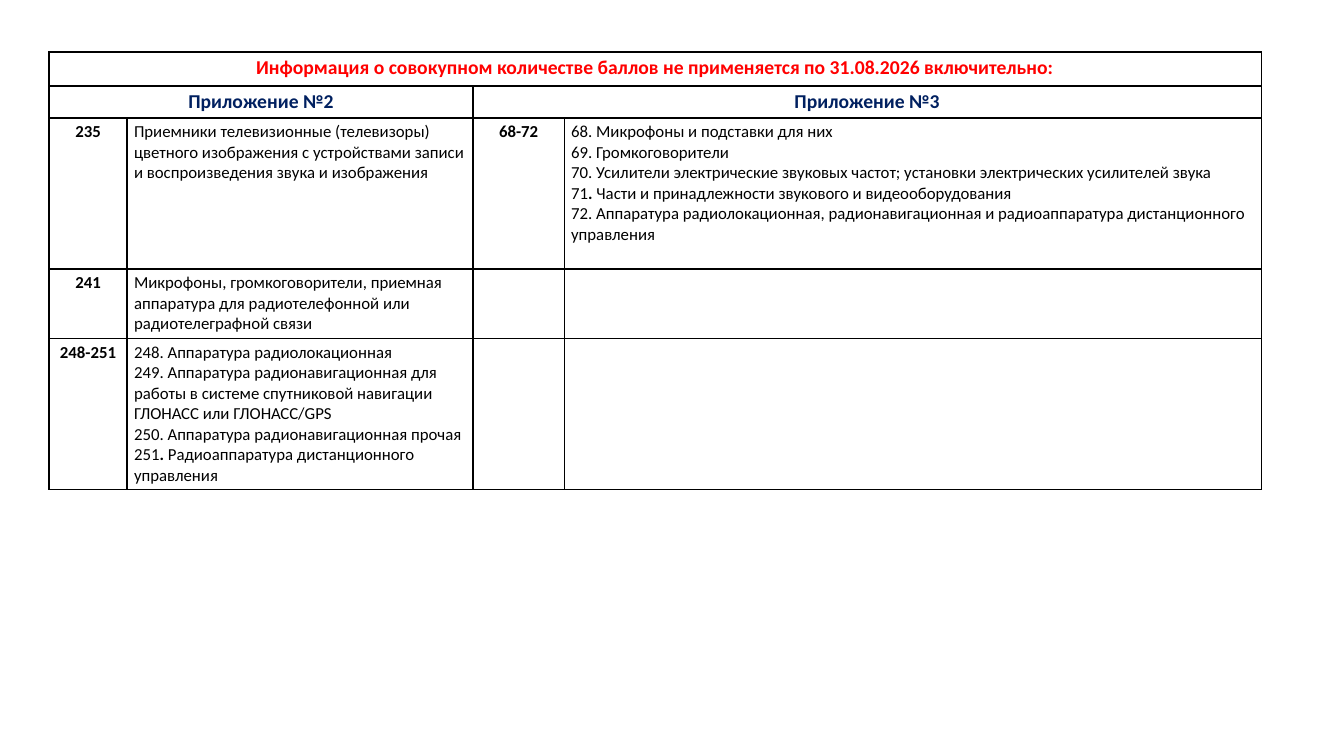
import pptx
import pptx.util
import pptx.dml.color
import pptx.enum.text
import lxml.etree

RGB = pptx.dml.color.RGBColor
RED = RGB(0xFF, 0x00, 0x00)
NAVY = RGB(0x00, 0x20, 0x60)
BLACK = RGB(0x00, 0x00, 0x00)
FONT = "Calibri"
PX = 914400 / 100.8

# Content: in body lines, the parts between bars switch to bold
TITLE = "Информация о совокупном количестве баллов не применяется по 31.08.2026 включительно:"
HEADS = ["Приложение №2", "Приложение №3"]
ROWS = [
    ("235",
     ["Приемники телевизионные (телевизоры) цветного изображения с устройствами записи "
      "и воспроизведения звука и изображения"],
     "68-72",
     ["68. Микрофоны и подставки для них",
      "69. Громкоговорители",
      "70. Усилители электрические звуковых частот; установки электрических усилителей звука",
      "71|. |Части и принадлежности звукового и видеооборудования",
      "72. Аппаратура радиолокационная, радионавигационная и радиоаппаратура "
      "дистанционного управления"]),
    ("241",
     ["Микрофоны, громкоговорители, приемная аппаратура для радиотелефонной "
      "или радиотелеграфной связи"],
     "", []),
    ("248-251",
     ["248. Аппаратура радиолокационная",
      "249. Аппаратура радионавигационная для работы в системе спутниковой навигации "
      "ГЛОНАСС или ГЛОНАСС/GPS",
      "250. Аппаратура радионавигационная прочая",
      "251|. |Радиоаппаратура дистанционного управления"],
     "", []),
]

# Layout in px
LEFT, TOP = 49, 52
WIDTHS = [78, 346, 91, 697]
HEIGHTS = [34, 32, 151, 69, 151]
PAD_X, PAD_Y = 7, 4


def px(size):
    return pptx.util.Emu(round(size * PX))


def style(run, size, color, bold):
    run.font.name = FONT
    run.font.size = pptx.util.Pt(size)
    run.font.color.rgb = color
    run.font.bold = bold


def label(cell, text, size=12, color=BLACK):
    """Write one bold centred line."""
    para = cell.text_frame.paragraphs[0]
    para.text = text
    para.alignment = pptx.enum.text.PP_ALIGN.CENTER
    para.font.size = pptx.util.Pt(size)
    for run in para.runs:
        style(run, size, color, True)


def body(cell, lines):
    """Write plain lines, one paragraph each."""
    frame = cell.text_frame
    frame.paragraphs[0].font.size = pptx.util.Pt(12)
    for i, line in enumerate(lines):
        para = frame.add_paragraph() if i else frame.paragraphs[0]
        for j, part in enumerate(line.split("|")):
            run = para.add_run()
            run.text = part
            style(run, 12, BLACK, j % 2 == 1)


def frame_cell(cell):
    """Set margins, no fill and a thin black border."""
    cell.margin_left = cell.margin_right = px(PAD_X)
    cell.margin_top = cell.margin_bottom = px(PAD_Y)
    cell.fill.background()
    props = cell._tc.get_or_add_tcPr()
    ns = "http://schemas.openxmlformats.org/drawingml/2006/main"
    for i, side in enumerate(["lnL", "lnR", "lnT", "lnB"]):
        edge = pptx.oxml.parse_xml(
            f'<a:{side} xmlns:a="{ns}" w="12700"><a:solidFill>'
            f'<a:srgbClr val="{BLACK}"/></a:solidFill></a:{side}>')
        props.insert(i, edge)


def main():
    deck = pptx.Presentation()
    deck.slide_width = pptx.util.Inches(13.33)
    deck.slide_height = pptx.util.Inches(7.5)
    slide = deck.slides.add_slide(deck.slide_layouts[6])

    # Table grid
    table = slide.shapes.add_table(
        len(HEIGHTS), len(WIDTHS), px(LEFT), px(TOP),
        px(sum(WIDTHS)), px(sum(HEIGHTS))).table
    table.first_row = table.horz_banding = False
    for col, width in zip(table.columns, WIDTHS):
        col.width = px(width)
    for row, height in zip(table.rows, HEIGHTS):
        row.height = px(height)
    for cell in table.iter_cells():
        frame_cell(cell)

    # Title and heads across merged cells
    table.cell(0, 0).merge(table.cell(0, 3))
    label(table.cell(0, 0), TITLE, 14, RED)
    for i, head in enumerate(HEADS):
        cell = table.cell(1, 2 * i)
        cell.merge(table.cell(1, 2 * i + 1))
        label(cell, head, 14, NAVY)

    # Number and text pairs
    for r, row in enumerate(ROWS, start=2):
        for c in (0, 2):
            label(table.cell(r, c), row[c])
            body(table.cell(r, c + 1), row[c + 1])

    deck.save("out.pptx")


if __name__ == "__main__":
    main()
